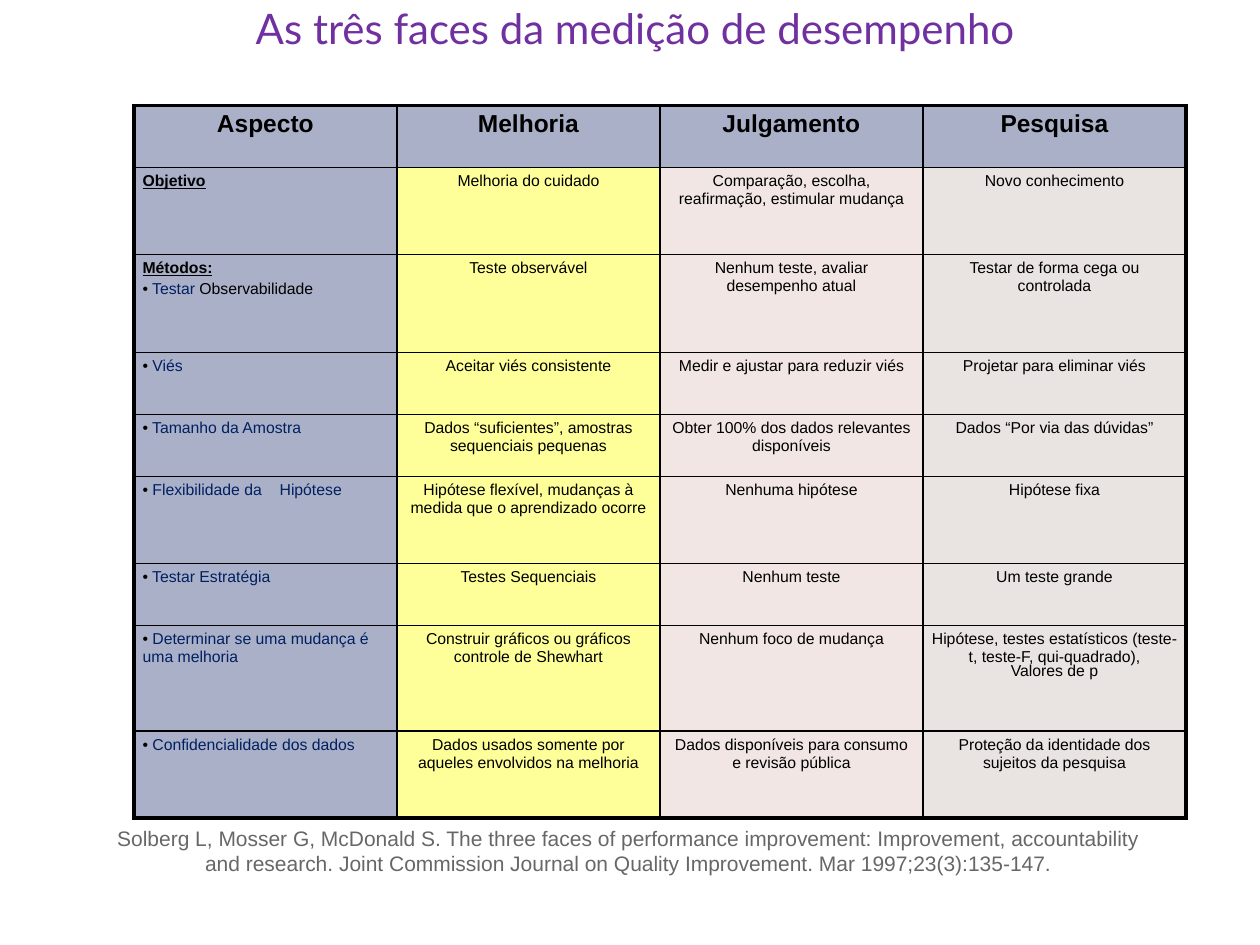
import pptx
import pptx.dml.color
import pptx.enum.text
import pptx.oxml
import pptx.oxml.ns
import pptx.util

Pt = pptx.util.Pt
ALIGN = pptx.enum.text.PP_ALIGN
BLACK, NAVY, HEADER = "000000", "002060", "AAB0C8"
FILLS = [HEADER, "FFFF99", "F1E6E3", "E9E3E1"]
HEIGHTS = [35.4, 49.8, 56, 35.4, 35.4, 49.8, 35.4, 60.4, 49.8]
ROWS = [
    ["Aspecto", "Melhoria", "Julgamento", "Pesquisa"],
    ["Objetivo", "Melhoria do cuidado",
     "Comparação, escolha, reafirmação, estimular mudança", "Novo conhecimento"],
    ["Métodos:\n• Testar |Observabilidade", "Teste observável",
     "Nenhum teste, avaliar desempenho atual", "Testar de forma cega ou controlada"],
    ["• Viés", "Aceitar viés consistente",
     "Medir e ajustar para reduzir viés", "Projetar para eliminar viés"],
    ["• Tamanho da Amostra", "Dados “suficientes”, amostras sequenciais pequenas",
     "Obter 100% dos dados relevantes disponíveis", "Dados “Por via das dúvidas”"],
    ["• Flexibilidade da\tHipótese",
     "Hipótese flexível, mudanças à medida que o aprendizado ocorre",
     "Nenhuma hipótese", "Hipótese fixa"],
    ["• Testar Estratégia", "Testes Sequenciais", "Nenhum teste", "Um teste grande"],
    ["• Determinar se uma mudança é uma melhoria",
     "Construir gráficos ou gráficos controle de Shewhart", "Nenhum foco de mudança",
     "Hipótese, testes estatísticos (teste-t, teste-F, qui-quadrado),\nValores de p"],
    ["• Confidencialidade dos dados",
     "Dados usados somente por aqueles envolvidos na melhoria",
     "Dados disponíveis para consumo e revisão pública",
     "Proteção da identidade dos sujeitos da pesquisa"],
]
CAPTIONS = [
    ("As três faces da medição de desempenho", (139, -2.2, 521.2, 36), ALIGN.LEFT,
     {"name": "Lato", "size": Pt(24)}, "7030A0"),
    ("Solberg L, Mosser G, McDonald S. The three faces of performance improvement: "
     "Improvement, accountability and research. Joint Commission Journal on Quality "
     "Improvement. Mar 1997;23(3):135-147.", (50.4, 468, 617.8, 36), ALIGN.CENTER,
     {"name": "Arial", "size": Pt(12)}, "676767"),
]


def color(value):
    return pptx.dml.color.RGBColor.from_string(value)


def add_span(para, text, formats, value):
    span = para.add_run()
    span.text = text
    for name, setting in formats.items():
        setattr(span.font, name, setting)
    span.font.color.rgb = color(value)


deck = pptx.Presentation()
deck.slide_width, deck.slide_height = Pt(720), Pt(540)
page = deck.slides.add_slide(deck.slide_layouts[6])
namespace = pptx.oxml.ns.nsdecls("a")

table = page.shapes.add_table(
    len(ROWS), 4, Pt(76.5), Pt(60.3), Pt(601.2), Pt(sum(HEIGHTS))).table
table.first_row = table.horz_banding = False
for column in table.columns:
    column.width = Pt(150.3)
for row, height in zip(table.rows, HEIGHTS):
    row.height = Pt(height)

margins = {"margin_left": Pt(5), "margin_right": Pt(5),
           "margin_top": Pt(2.9), "margin_bottom": Pt(2.9)}
last = len(ROWS) - 1
for r, texts in enumerate(ROWS):
    for c, text in enumerate(texts):
        cell = table.cell(r, c)
        for name, setting in margins.items():
            setattr(cell, name, setting)
        outer_sides = {"L": c == 0, "R": c == 3, "T": r == 0, "B": r == last}
        for side, outer in outer_sides.items():
            cell._tc.get_or_add_tcPr().append(pptx.oxml.parse_xml(
                f'<a:ln{side} {namespace} w="{Pt(2.25 if outer else 1)}"><a:solidFill>'
                f'<a:srgbClr val="{BLACK}"/></a:solidFill></a:ln{side}>'))
        cell.fill.solid()
        cell.fill.fore_color.rgb = color(HEADER if r == 0 else FILLS[c])

        for p, line in enumerate(text.split("\n")):
            frame = cell.text_frame
            para = frame.add_paragraph() if p else frame.paragraphs[0]
            para.alignment = ALIGN.LEFT if r and c == 0 else ALIGN.CENTER
            bulleted = line.startswith("•")
            heading = r > 0 and c == 0 and not bulleted
            if bulleted:
                properties = para._p.get_or_add_pPr()
                properties.set("marL", "0")
                properties.set("indent", "0")
                parts = [f'<a:buClr {namespace}><a:srgbClr val="{BLACK}"/></a:buClr>',
                         f'<a:buFont {namespace} typeface="Arial"/>',
                         f'<a:buChar {namespace} char="•"/>']
                if "\t" in line:
                    parts.append(f'<a:tabLst {namespace}><a:tab pos="{Pt(78.3)}" '
                                 'algn="l"/></a:tabLst>')
                for part in parts:
                    properties.append(pptx.oxml.parse_xml(part))
            if p:
                para.space_before = Pt(1.8)
                if c == 3:
                    para.line_spacing = 0.54
            formats = {"name": "Arial", "size": Pt(9 if r else 14),
                       "bold": r == 0 or heading, "underline": heading}
            for s, words in enumerate(line.lstrip("•").split("|")):
                add_span(para, words, formats, NAVY if bulleted and s == 0 else BLACK)

for text, place, alignment, formats, value in CAPTIONS:
    box = page.shapes.add_textbox(*map(Pt, place))
    box.text_frame.word_wrap = True
    para = box.text_frame.paragraphs[0]
    para.alignment = alignment
    add_span(para, text, formats, value)

deck.save("out.pptx")
